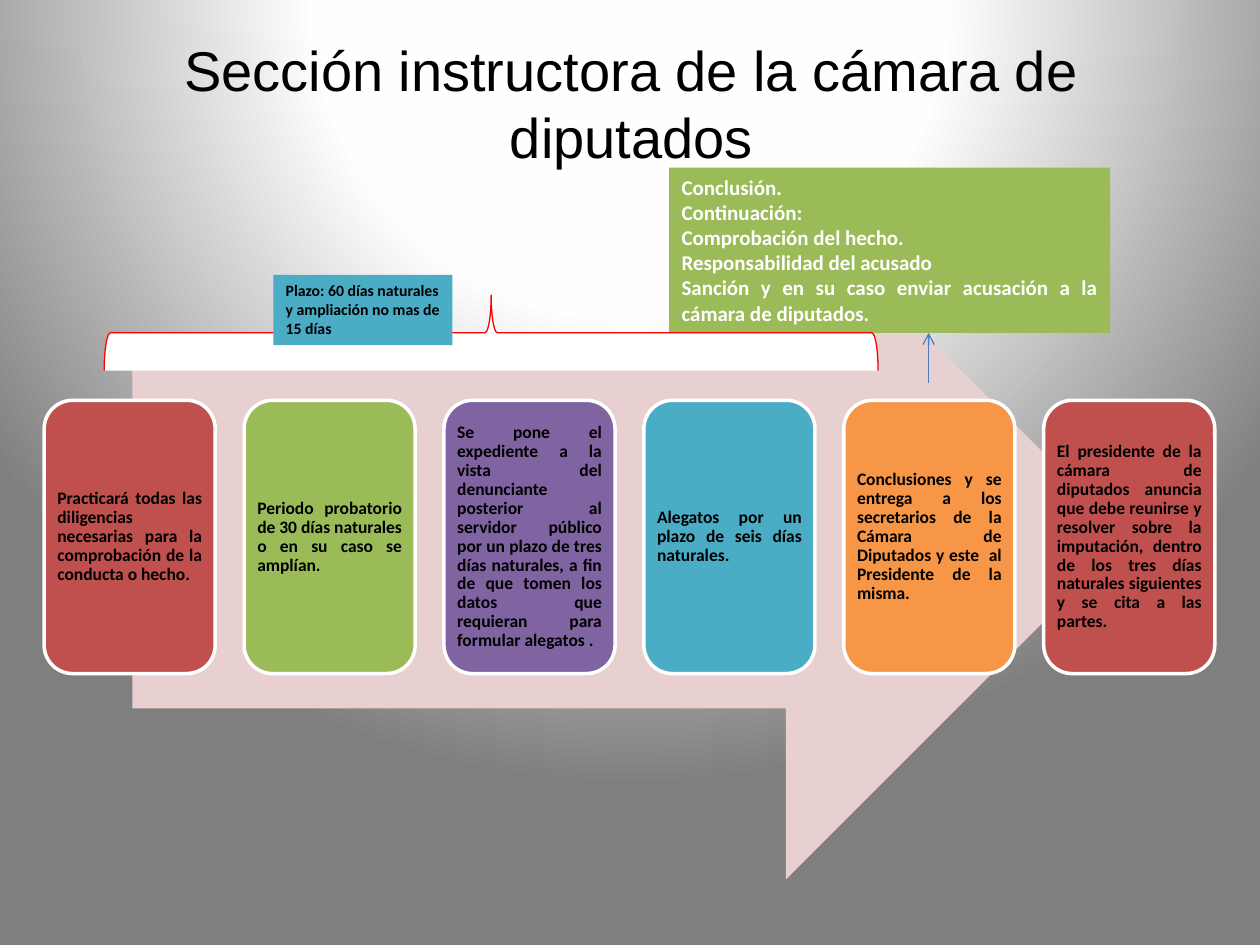
from dataclasses import dataclass

from lxml import etree
from pptx import Presentation
from pptx import util as u
from pptx.dml import color
from pptx.enum import shapes, text
from pptx.oxml import ns


@dataclass(frozen=True)
class Theme:
    red: str = "C0504D"
    green: str = "9BBB59"
    purple: str = "8064A2"
    teal: str = "4BACC6"
    orange: str = "F79646"
    pale_red: str = "E8D0D0"
    brace_red: str = "FF0000"
    arrow_blue: str = "4B7EBC"
    black: str = "000000"
    white: str = "FFFFFF"
    backdrop: tuple = ((0, "FFFFFF"), (40, "FEFEFE"), (100, "7F7F7F"))
    heading_font: str = "Arial"
    body_font: str = "Calibri"
    title_size: int = 32
    conclusion_size: int = 12
    card_size: int = 10
    deadline_size: int = 9


THEME = Theme()

STEPS = [
    ("Practicará todas las diligencias necesarias para la comprobación de la "
     "conducta o hecho.", THEME.red),
    ("Periodo probatorio de 30 días naturales o en su caso se amplían.", THEME.green),
    ("Se pone el expediente a la vista del denunciante posterior al servidor público "
     "por un plazo de tres días naturales, a fin de que tomen los datos que requieran "
     "para formular alegatos .", THEME.purple),
    ("Alegatos por un plazo de seis días naturales.", THEME.teal),
    ("Conclusiones y se entrega a los secretarios de la Cámara de Diputados y este  al "
     "Presidente de la misma. ", THEME.orange),
    ("El presidente de la cámara de diputados anuncia que debe reunirse y resolver sobre "
     "la imputación, dentro de los tres días naturales siguientes y se cita a las partes.",
     THEME.red),
]
CONCLUSION = [
    "Conclusión.",
    "Continuación: ",
    "Comprobación del hecho.",
    "Responsabilidad del acusado",
    "Sanción y en su caso enviar acusación a la cámara de diputados.",
]
CARD_LEFT, CARD_TOP, CARD_WIDTH, CARD_HEIGHT, CARD_PITCH = 0.89, 8.07, 3.45, 5.51, 4.03


def rgb(value):
    return color.RGBColor.from_string(value)


def write_text(shape, paragraphs, *, size, font=THEME.body_font, ink=THEME.black,
               bold=True, align=text.PP_ALIGN.JUSTIFY, anchor=text.MSO_ANCHOR.TOP,
               spacing=None, inset=(0.25, 0.13)):
    frame = shape.text_frame
    frame.word_wrap = True
    frame.auto_size = text.MSO_AUTO_SIZE.NONE
    frame.vertical_anchor = anchor
    frame.margin_left = frame.margin_right = u.Cm(inset[0])
    frame.margin_top = frame.margin_bottom = u.Cm(inset[1])
    for index, content in enumerate(paragraphs):
        paragraph = frame.add_paragraph() if index else frame.paragraphs[0]
        paragraph.alignment = align
        paragraph.line_spacing = spacing
        run = paragraph.add_run()
        run.text = content
        run.font.name = font
        run.font.size = u.Pt(size)
        run.font.bold = bold
        run.font.color.rgb = rgb(ink)


def add_shape(slide, kind, left, top, width, height, fill, line=None, line_width=0.75):
    shape = slide.shapes.add_shape(kind, u.Cm(left), u.Cm(top), u.Cm(width), u.Cm(height))
    shape.shadow.inherit = False
    shape.fill.solid()
    shape.fill.fore_color.rgb = rgb(fill)
    if line:
        shape.line.color.rgb = rgb(line)
        shape.line.width = u.Pt(line_width)
    else:
        shape.line.fill.background()
    return shape


def add_arrow(slide, x, start, end):
    arrow = slide.shapes.add_connector(
        shapes.MSO_CONNECTOR.STRAIGHT, u.Cm(x), u.Cm(start), u.Cm(x), u.Cm(end))
    arrow.line.color.rgb = rgb(THEME.arrow_blue)
    arrow.line.width = u.Pt(0.75)
    etree.SubElement(arrow.line._get_or_add_ln(), ns.qn("a:tailEnd"), type="arrow")
    etree.SubElement(arrow._element.spPr, ns.qn("a:effectLst"))


def set_background(slide):
    slide.background.fill.gradient()
    gradient = slide.element.find(".//" + ns.qn("a:gradFill"))
    for child in list(gradient):
        gradient.remove(child)
    stops = etree.SubElement(gradient, ns.qn("a:gsLst"))
    for position, value in THEME.backdrop:
        stop = etree.SubElement(stops, ns.qn("a:gs"), pos=str(position * 1000))
        etree.SubElement(stop, ns.qn("a:srgbClr"), val=value)
    circle = etree.SubElement(gradient, ns.qn("a:path"), path="circle")
    etree.SubElement(circle, ns.qn("a:fillToRect"),
                     l="50000", t="-80000", r="50000", b="180000")


def add_title(slide):
    title = slide.shapes.title
    title.left, title.top = u.Cm(2.29), u.Cm(1.02)
    title.width, title.height = u.Cm(20.88), u.Cm(2.11)
    write_text(title, ["Sección instructora de la cámara de diputados"],
               size=THEME.title_size, font=THEME.heading_font, bold=False,
               align=text.PP_ALIGN.CENTER, anchor=text.MSO_ANCHOR.MIDDLE)


def add_process(slide):
    kinds = shapes.MSO_SHAPE
    add_shape(slide, kinds.RIGHT_ARROW, 2.67, 3.94, 20.07, 13.79, THEME.pale_red)
    for index, (content, fill) in enumerate(STEPS):
        card = add_shape(slide, kinds.ROUNDED_RECTANGLE, CARD_LEFT + index * CARD_PITCH,
                         CARD_TOP, CARD_WIDTH, CARD_HEIGHT, fill, THEME.white, 2)
        write_text(card, [content], size=THEME.card_size, spacing=0.9,
                   anchor=text.MSO_ANCHOR.MIDDLE, inset=(0.1, 0.1))


def add_annotations(slide):
    kinds = shapes.MSO_SHAPE
    add_arrow(slide, 18.72, 7.72, 6.71)
    conclusion = add_shape(slide, kinds.RECTANGLE, 13.49, 3.38, 8.89, 3.33, THEME.green)
    write_text(conclusion, CONCLUSION, size=THEME.conclusion_size, ink=THEME.white)
    brace = add_shape(slide, kinds.LEFT_BRACE, 9.14, -1.09, 1.52, 15.6,
                      THEME.white, THEME.brace_red)
    brace.rotation = 90
    deadline = add_shape(slide, kinds.RECTANGLE, 5.51, 5.54, 3.61, 1.42, THEME.teal)
    write_text(deadline, ["Plazo: 60 días naturales y ampliación no mas de 15 días"],
               size=THEME.deadline_size, align=text.PP_ALIGN.LEFT)


def main():
    presentation = Presentation()
    presentation.slide_width, presentation.slide_height = u.Cm(25.4), u.Cm(19.05)
    slide = presentation.slides.add_slide(presentation.slide_layouts[5])
    set_background(slide)
    add_title(slide)
    add_process(slide)
    add_annotations(slide)
    presentation.save("out.pptx")


if __name__ == "__main__":
    main()
